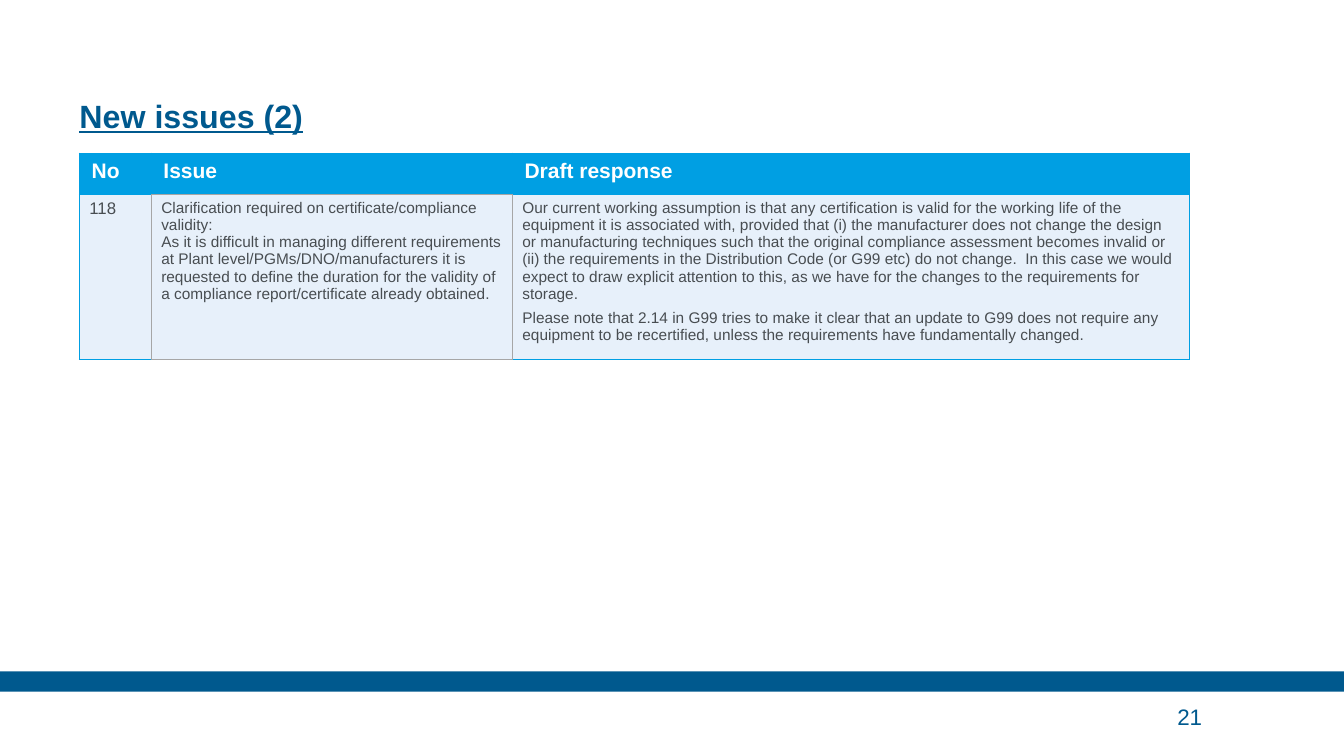
from lxml import etree
from pptx import Presentation
from pptx.dml.color import RGBColor
from pptx.enum import shapes, text
from pptx.oxml import ns
from pptx.util import Cm, Pt

NAVY = RGBColor(0x00, 0x59, 0x8E)
BLUE = RGBColor(0x00, 0x9F, 0xE3)
PALE = RGBColor(0xE7, 0xF0, 0xFA)
GREY = RGBColor(0xA6, 0xA6, 0xA6)
DARK = RGBColor(0x48, 0x4D, 0x51)
WHITE = RGBColor(0xFF, 0xFF, 0xFF)

TITLE = "New issues (2)"
PAGE_NUMBER = "21"
HEADERS = ["No", "Issue", "Draft response"]
ISSUE = [
    ["118"],
    [
        "Clarification required on certificate/compliance validity:",
        "As it is difficult in managing different requirements at Plant level/PGMs/DNO/manufacturers "
        "it is requested to define the duration for the validity of a compliance report/certificate "
        "already obtained.",
    ],
    [
        "Our current working assumption is that any certification is valid for the working life of the "
        "equipment it is associated with, provided that (i) the manufacturer does not change the design "
        "or manufacturing techniques such that the original compliance assessment becomes invalid or "
        "(ii) the requirements in the Distribution Code (or G99 etc) do not change.  In this case we "
        "would expect to draw explicit attention to this, as we have for the changes to the "
        "requirements for storage.",
        "Please note that 2.14 in G99 tries to make it clear that an update to G99 does not require any "
        "equipment to be recertified, unless the requirements have fundamentally changed.",
    ],
]
BODY_SIZES = [12, 11, 11]
BODY_GAPS = [0, 0, 5]
HEADER_BORDERS = [
    {"L": BLUE, "R": BLUE, "T": BLUE, "B": BLUE},
    {"L": BLUE, "R": BLUE, "T": BLUE, "B": GREY},
    {"L": BLUE, "R": BLUE, "T": BLUE, "B": BLUE},
]
BODY_BORDERS = [
    {"L": BLUE, "T": BLUE, "R": GREY, "B": BLUE},
    {"L": GREY, "T": GREY, "R": GREY, "B": GREY},
    {"L": GREY, "T": BLUE, "R": BLUE, "B": BLUE},
]
LEFT = Cm(2)
COLUMN_WIDTHS = [Cm(1.81), Cm(9.1), Cm(17.06)]
ROW_HEIGHTS = [Cm(1.04), Cm(3.89)]


def style(para, size, color, bold=False):
    """Set the font of a paragraph."""
    font = para.font
    font.name, font.size, font.bold = "Arial", Pt(size), bold
    font.color.rgb = color


def clear_margins(frame):
    """Remove the inner margins of a text frame."""
    frame.margin_left = frame.margin_right = frame.margin_top = frame.margin_bottom = 0


def fill_cell(cell, lines, size, color, fill, borders, bold=False, gap=0):
    """Write, colour and outline one table cell."""
    cell.text = "\n".join(lines)
    for para in cell.text_frame.paragraphs:
        para.space_after = Pt(gap)
        style(para, size, color, bold)
    properties = cell._tc.get_or_add_tcPr()
    for side in "LRTB":
        line = etree.SubElement(properties, ns.qn(f"a:ln{side}"), w=str(Pt(1)))
        solid = etree.SubElement(line, ns.qn("a:solidFill"))
        etree.SubElement(solid, ns.qn("a:srgbClr"), val=str(borders[side]))
    cell.fill.solid()
    cell.fill.fore_color.rgb = fill


def add_issue_table(page):
    """Add the table of issues and responses."""
    table = page.shapes.add_table(
        2, 3, LEFT, Cm(3.86), sum(COLUMN_WIDTHS), sum(ROW_HEIGHTS)
    ).table
    table.horz_banding = False
    for row, height in zip(table.rows, ROW_HEIGHTS):
        row.height = height
    for index, width in enumerate(COLUMN_WIDTHS):
        table.columns[index].width = width
        header = table.cell(0, index)
        header.margin_left = header.margin_right = Cm(0.31)
        header.margin_top = header.margin_bottom = Cm(0.15)
        fill_cell(header, [HEADERS[index]], 15, WHITE, BLUE, HEADER_BORDERS[index], bold=True)
        fill_cell(table.cell(1, index), ISSUE[index], BODY_SIZES[index], DARK, PALE,
                  BODY_BORDERS[index], gap=BODY_GAPS[index])


def main():
    """Build the slide and save it."""
    deck = Presentation()
    deck.slide_width, deck.slide_height = Cm(33.87), Cm(19.05)
    page = deck.slides.add_slide(deck.slide_layouts[5])

    band = page.shapes.add_shape(
        shapes.MSO_SHAPE.RECTANGLE, 0, Cm(16.92), deck.slide_width, Cm(0.51)
    )
    band.shadow.inherit = False
    band.fill.solid()
    band.fill.fore_color.rgb = NAVY
    band.line.fill.background()

    title = page.shapes.title
    title.left, title.top, title.width, title.height = LEFT, Cm(0.81), Cm(25), Cm(2.59)
    title.text = TITLE
    clear_margins(title.text_frame)
    title.text_frame.vertical_anchor = text.MSO_ANCHOR.BOTTOM
    heading = title.text_frame.paragraphs[0]
    heading.alignment = text.PP_ALIGN.LEFT
    heading.line_spacing = Pt(30)
    style(heading, 23, NAVY, bold=True)
    heading.font.underline = True

    number = page.shapes.add_textbox(Cm(29.67), Cm(17.55), Cm(3.12), Cm(0.99)).text_frame
    number.word_wrap = True
    number.text = PAGE_NUMBER
    clear_margins(number)
    number.vertical_anchor = text.MSO_ANCHOR.MIDDLE
    style(number.paragraphs[0], 16, NAVY)

    add_issue_table(page)
    deck.save("out.pptx")


if __name__ == "__main__":
    main()
